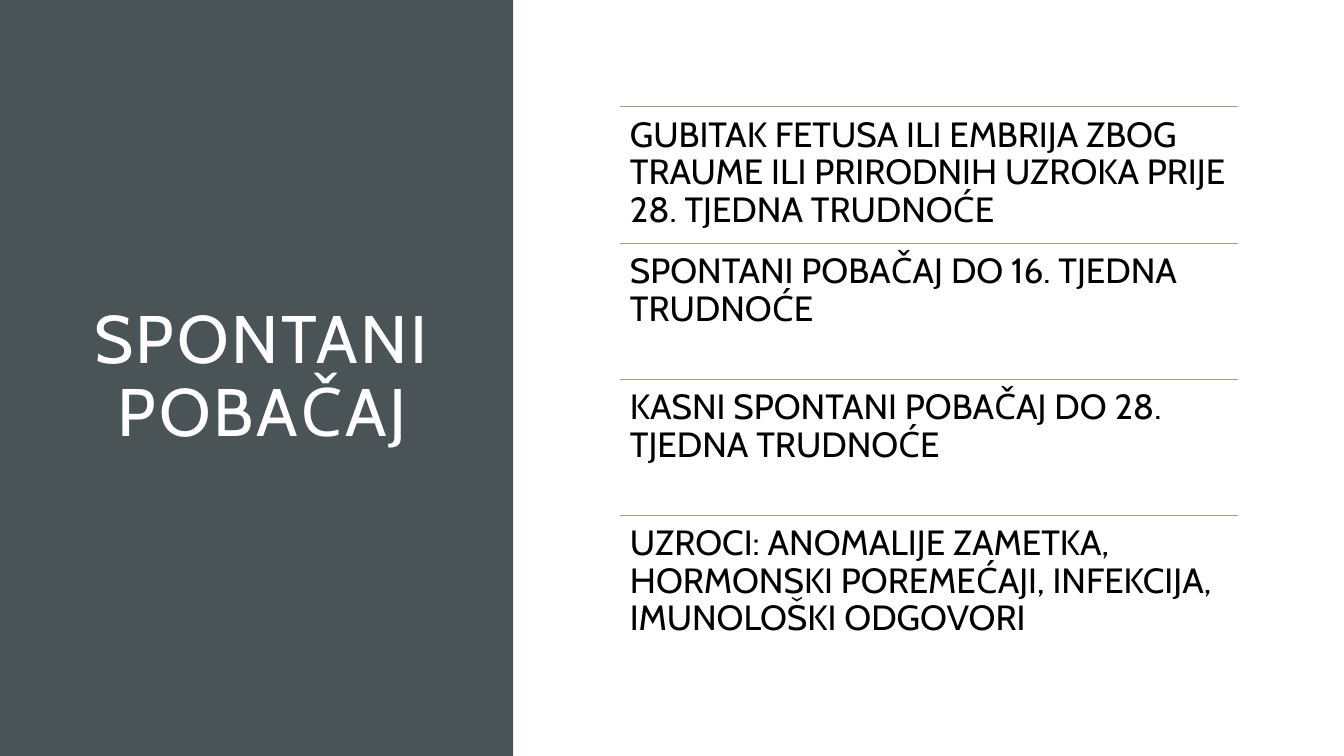
from lxml.etree import SubElement
from pptx import Presentation
from pptx.dml.color import RGBColor
from pptx.enum.shapes import MSO_CONNECTOR as Connector, MSO_SHAPE as Shape
from pptx.enum.text import MSO_ANCHOR as Anchor, MSO_AUTO_SIZE as AutoSize, PP_ALIGN as Align
from pptx.oxml.ns import qn
from pptx.util import Inches, Pt

SLATE = RGBColor(0x4A, 0x53, 0x56)
SAGE = RGBColor(0x9C, 0xA3, 0x83)
WHITE = RGBColor(0xFF, 0xFF, 0xFF)
BLACK = RGBColor(0x00, 0x00, 0x00)

LIST_LEFT, LIST_TOP, LIST_WIDTH, ROW_HEIGHT = 6.15, 1.06, 6.13, 1.35
POINTS = [
    "GUBITAK FETUSA ILI EMBRIJA ZBOG TRAUME ILI PRIRODNIH UZROKA PRIJE 28. TJEDNA TRUDNOĆE",
    "SPONTANI POBAČAJ DO 16. TJEDNA TRUDNOĆE",
    "KASNI SPONTANI POBAČAJ DO 28. TJEDNA TRUDNOĆE",
    "UZROCI: ANOMALIJE ZAMETKA, HORMONSKI POREMEĆAJI, INFEKCIJA, IMUNOLOŠKI ODGOVORI",
]


def write_text(box, text, size, color, inset, anchor, align):
    """Fill a box with one formatted paragraph and return its run."""
    frame = box.text_frame
    frame.text = text
    frame.word_wrap = True
    frame.auto_size = AutoSize.NONE
    frame.vertical_anchor = anchor
    frame.margin_left = frame.margin_right = Inches(inset)
    frame.margin_top = frame.margin_bottom = Inches(inset)
    para = frame.paragraphs[0]
    para.alignment = align
    para.line_spacing = 0.9
    span = para.runs[0]
    span.font.name = "Cabin"
    span.font.size = Pt(size)
    span.font.color.rgb = color
    return span


deck = Presentation()
deck.slide_width = Inches(13.33)
deck.slide_height = Inches(7.5)
page = deck.slides.add_slide(deck.slide_layouts[5])

panel = page.shapes.add_shape(Shape.RECTANGLE, 0, 0, Inches(5.09), deck.slide_height)
panel.shadow.inherit = False
panel.fill.solid()
panel.fill.fore_color.rgb = SLATE
panel.line.fill.background()

title = page.shapes.title
title.left, title.top = Inches(0.59), Inches(2.78)
title.width, title.height = Inches(4.03), Inches(1.94)
title_span = write_text(title, "SPONTANI POBAČAJ", 48, WHITE, 0.2, Anchor.MIDDLE, Align.CENTER)
title_span.font._element.set("spc", "200")
panel._element.addnext(title._element)  # the title lies on the panel

for row, point in enumerate(POINTS):
    left, top = Inches(LIST_LEFT), Inches(LIST_TOP + row * ROW_HEIGHT)
    width = Inches(LIST_WIDTH)

    rule = page.shapes.add_connector(Connector.STRAIGHT, left, top, left + width, top)
    rule.line.color.rgb = SAGE
    rule.line.width = Pt(0.5)
    SubElement(rule._element.spPr, qn("a:effectLst"))

    box = page.shapes.add_textbox(left, top, width, Inches(ROW_HEIGHT))
    write_text(box, point, 25, BLACK, 0.1, Anchor.TOP, Align.LEFT)

deck.save("out.pptx")
